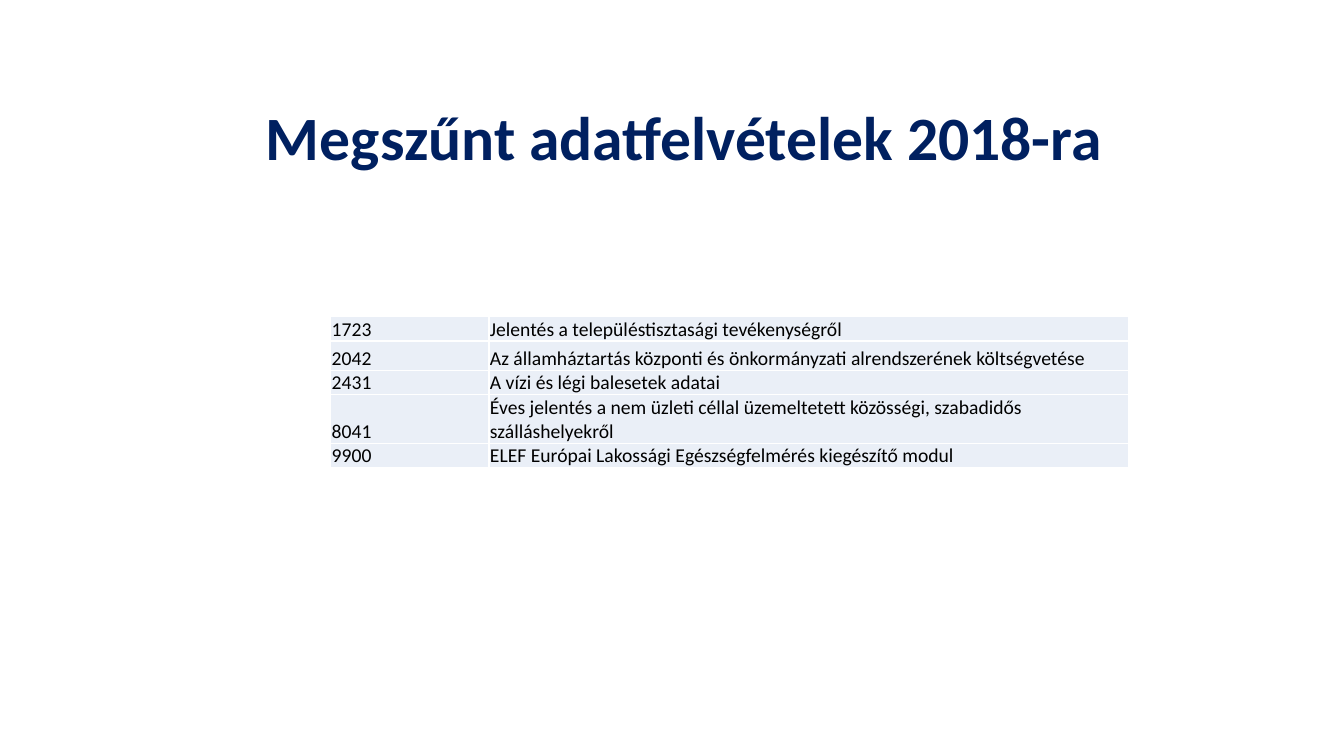
from lxml.etree import SubElement
from pptx import Presentation
from pptx.dml.color import RGBColor
from pptx.enum.text import MSO_ANCHOR, PP_ALIGN
from pptx.oxml.ns import qn
from pptx.util import Inches, Pt

NAVY = RGBColor(0x00, 0x20, 0x60)
BLACK = RGBColor(0x00, 0x00, 0x00)
WHITE = RGBColor(0xFF, 0xFF, 0xFF)
PALE = RGBColor(0xEA, 0xEF, 0xF7)

TITLE = "Megszűnt adatfelvételek 2018-ra"
WIDTHS = (1.57, 6.34)
ROWS = (
    (0.24, "1723", "Jelentés a településtisztasági tevékenységről"),
    (0.29, "2042", "Az államháztartás központi és önkormányzati alrendszerének költségvetése"),
    (0.24, "2431", "A vízi és légi balesetek adatai"),
    (0.48, "8041", "Éves jelentés a nem üzleti céllal üzemeltetett közösségi, szabadidős szálláshelyekről"),
    (0.24, "9900", "ELEF Európai Lakossági Egészségfelmérés kiegészítő modul"),
)


def set_font(para, size, color, bold=False):
    """Set the font of a whole paragraph."""
    font = para.font
    font.name = "Calibri"
    font.size = Pt(size)
    font.bold = bold
    font.color.rgb = color


def add_title(slide, text):
    """Add the heading of the slide."""
    box = slide.shapes.add_textbox(Inches(2.54), Inches(0.93), Inches(9.07), Inches(0.92))
    frame = box.text_frame
    frame.word_wrap = True
    frame.vertical_anchor = MSO_ANCHOR.MIDDLE
    para = frame.paragraphs[0]
    para.text = text
    para.alignment = PP_ALIGN.LEFT
    para.line_spacing = 0.9
    set_font(para, 44, NAVY, True)


def add_borders(cell):
    """Draw a thin white line on each side of a cell."""
    props = cell._tc.get_or_add_tcPr()
    for side in ("a:lnL", "a:lnR", "a:lnT", "a:lnB"):
        line = SubElement(props, qn(side), w=str(Pt(1)))
        fill = SubElement(line, qn("a:solidFill"))
        SubElement(fill, qn("a:srgbClr"), val=str(WHITE))


def fill_cell(cell, text):
    """Write and style one table cell."""
    cell.text = text
    cell.vertical_anchor = MSO_ANCHOR.BOTTOM
    cell.margin_left = cell.margin_right = cell.margin_top = Inches(0.01)
    cell.margin_bottom = 0
    add_borders(cell)
    cell.fill.solid()
    cell.fill.fore_color.rgb = PALE
    set_font(cell.text_frame.paragraphs[0], 14, BLACK)


def add_survey_table(slide):
    """Add the table of ended surveys."""
    height = sum(row[0] for row in ROWS)
    frame = slide.shapes.add_table(
        len(ROWS), len(WIDTHS), Inches(3.28), Inches(3.14), Inches(sum(WIDTHS)), Inches(height)
    )
    table = frame.table
    table.first_row = False
    table.horz_banding = False
    for column, width in zip(table.columns, WIDTHS):
        column.width = Inches(width)
    for row, (height, *texts) in zip(table.rows, ROWS):
        row.height = Inches(height)
        for cell, text in zip(row.cells, texts):
            fill_cell(cell, text)


def main():
    """Build and save the slide."""
    deck = Presentation()
    deck.slide_width = Inches(13.33)
    deck.slide_height = Inches(7.5)
    slide = deck.slides.add_slide(deck.slide_layouts[6])
    add_title(slide, TITLE)
    add_survey_table(slide)
    deck.save("out.pptx")


if __name__ == "__main__":
    main()
